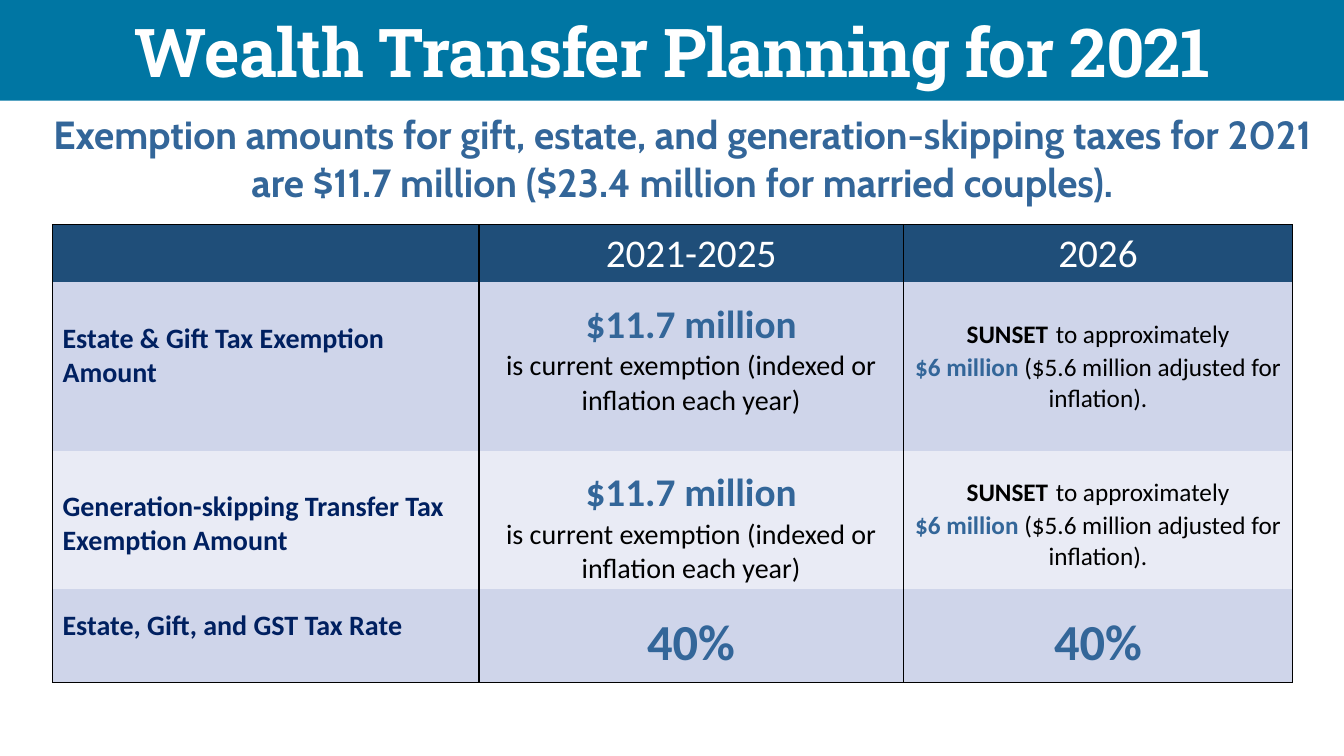
from lxml.etree import SubElement
from pptx import Presentation
from pptx.dml.color import RGBColor
from pptx.enum.shapes import MSO_SHAPE
from pptx.enum.text import MSO_ANCHOR, PP_ALIGN
from pptx.oxml.ns import qn
from pptx.util import Inches, Pt

WIDTH, HEIGHT = 13.33, 7.5
BLACK, WHITE, NAVY, BLUE = "000000", "FFFFFF", "002060", "336699"
BANNER, HEADER, BAND_DARK, BAND_LIGHT = "0076A3", "1F4E79", "CFD5EA", "E9EBF5"

COLUMNS = [4.23, 4.21, 3.86]
ROWS = [0.57, 1.67, 1.36, 0.93]
ROW_FILLS = [HEADER, BAND_DARK, BAND_LIGHT, BAND_DARK]


def color(hex_code):
    return RGBColor.from_string(hex_code)


def write(frame, lines, font="Calibri", align=PP_ALIGN.CENTER):
    """Each line is a list of (text, size, color, bold) runs."""
    frame.word_wrap = True
    for index, line in enumerate(lines):
        paragraph = frame.paragraphs[0] if index == 0 else frame.add_paragraph()
        paragraph.alignment = align
        for text, size, ink, bold in line:
            run = paragraph.add_run()
            run.text = text
            run.font.name, run.font.size, run.font.bold = font, Pt(size), bold
            run.font.color.rgb = color(ink)


def set_borders(cell, visible):
    properties = cell._tc.get_or_add_tcPr()
    for side in "LRTB":
        border = SubElement(properties, qn(f"a:ln{side}"), w=str(Pt(1)))
        if side in visible:
            fill = SubElement(border, qn("a:solidFill"))
            SubElement(fill, qn("a:srgbClr"), val=BLACK)
        else:
            SubElement(border, qn("a:noFill"))


def add_banner(slide, title):
    banner = slide.shapes.add_shape(
        MSO_SHAPE.RECTANGLE, 0, 0, Inches(WIDTH), Inches(1))
    banner.shadow.inherit = False
    banner.fill.solid()
    banner.fill.fore_color.rgb = color(BANNER)
    banner.line.fill.background()
    frame = banner.text_frame
    frame.vertical_anchor = MSO_ANCHOR.MIDDLE
    write(frame, [[(title, 48.1, WHITE, True)]], "Roboto Slab")
    frame.paragraphs[0].runs[0]._r.get_or_add_rPr().set("spc", "-60")


def add_summary(slide, lines):
    summary = slide.shapes.add_textbox(
        Inches(0.2), Inches(1.05), Inches(WIDTH - 0.2), Inches(1.1))
    write(summary.text_frame, [[(line, 28, BLUE, True)] for line in lines], "Cabin")


def heading(text):
    return 0.05, [[(text, 28, WHITE, False)]]


def label(text, top=0.39):
    return top, [[(text, 20, NAVY, True)]]


def exemption():
    return 0.19, [
        [("$11.7 million", 28, BLUE, True)],
        [("is current exemption (indexed or inflation each year)", 20, BLACK, False)],
    ]


def sunset(top):
    return top, [
        [("SUNSET", 18, BLACK, True), (" ", 24, BLACK, True),
         ("to approximately", 18, BLACK, False)],
        [("$6 million ", 18, BLUE, True),
         ("($5.6 million adjusted for inflation).", 18, BLACK, False)],
    ]


def rate():
    return 0.23, [[("40%", 36, BLUE, True)]]


def add_exemption_table(slide, content):
    table = slide.shapes.add_table(
        len(ROWS), len(COLUMNS), Inches(0.52), Inches(2.23),
        Inches(sum(COLUMNS)), Inches(sum(ROWS))).table
    for column, width in zip(table.columns, COLUMNS):
        column.width = Inches(width)
    for r, (row, height) in enumerate(zip(table.rows, ROWS)):
        row.height = Inches(height)
        edge = {0: "T", len(ROWS) - 1: "B"}.get(r, "")
        for c, cell in enumerate(row.cells):
            set_borders(cell, "LR" + edge)
            cell.fill.solid()
            cell.fill.fore_color.rgb = color(ROW_FILLS[r])
            if content[r][c]:
                top, lines = content[r][c]
                cell.margin_top = Inches(top)
                align = PP_ALIGN.LEFT if c == 0 else PP_ALIGN.CENTER
                write(cell.text_frame, lines, align=align)


def main():
    deck = Presentation()
    deck.slide_width, deck.slide_height = Inches(WIDTH), Inches(HEIGHT)
    slide = deck.slides.add_slide(deck.slide_layouts[6])

    # Title and summary
    add_banner(slide, "Wealth Transfer Planning for 2021")
    add_summary(slide, [
        "Exemption amounts for gift, estate, and generation-skipping taxes for 2021",
        "are $11.7 million ($23.4 million for married couples).",
    ])

    # Exemptions and rate by period
    add_exemption_table(slide, [
        [None, heading("2021-2025"), heading("2026")],
        [label("Estate & Gift Tax Exemption Amount"), exemption(), sunset(0.29)],
        [label("Generation-skipping Transfer Tax Exemption Amount"),
         exemption(), sunset(0.19)],
        [label("Estate, Gift, and GST Tax Rate", 0.2), rate(), rate()],
    ])
    deck.save("out.pptx")


if __name__ == "__main__":
    main()
